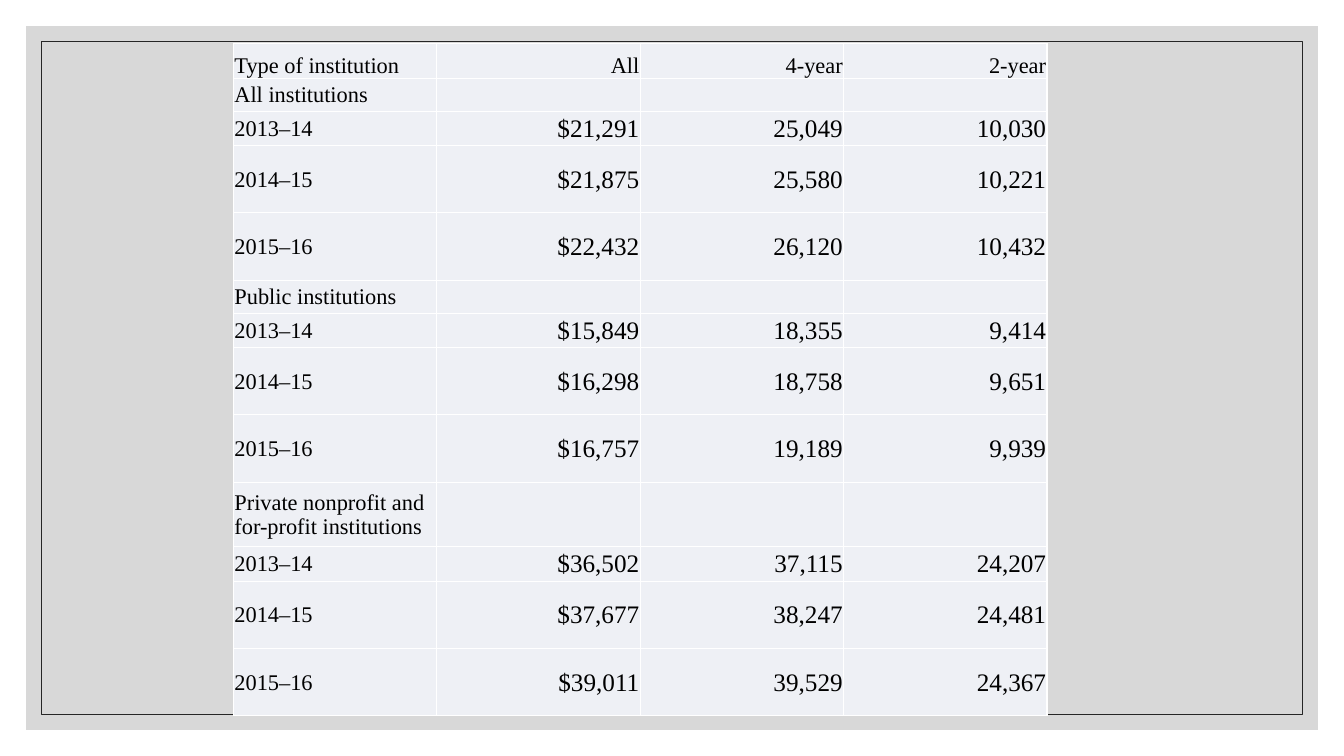
from dataclasses import dataclass

from lxml.etree import SubElement
from pptx import Presentation
from pptx.dml.color import RGBColor
from pptx.enum.shapes import MSO_SHAPE as Preset
from pptx.enum.text import MSO_ANCHOR as Anchor, PP_ALIGN as Align
from pptx.oxml.ns import qn
from pptx.util import Pt


@dataclass(frozen=True)
class Theme:
    font: str = "Times New Roman"
    label_size: int = 16
    value_size: int = 18
    text: str = "000000"
    panel: str = "BFBFBF"
    panel_opacity: int = 60
    frame: str = "262626"
    cell: str = "EEF0F5"
    border: str = "FFFFFF"


THEME = Theme()
SLIDE_WIDTH, SLIDE_HEIGHT = 960, 540
HEADER = ("Type of institution", "All", "4-year", "2-year")
YEARS = ("2013–14", "2014–15", "2015–16")
YEAR_HEIGHTS = (24.6, 48.1, 48.1)
HEADER_HEIGHT = 25
# Institution type, height of its heading row, costs for each year
GROUPS = (
    ("All institutions", 23.6, (
        ("$21,291", "25,049", "10,030"),
        ("$21,875", "25,580", "10,221"),
        ("$22,432", "26,120", "10,432"))),
    ("Public institutions", 23.6, (
        ("$15,849", "18,355", "9,414"),
        ("$16,298", "18,758", "9,651"),
        ("$16,757", "19,189", "9,939"))),
    ("Private nonprofit and for-profit institutions", 46.1, (
        ("$36,502", "37,115", "24,207"),
        ("$37,677", "38,247", "24,481"),
        ("$39,011", "39,529", "24,367"))),
)


def color(value):
    return RGBColor.from_string(value)


def add_rectangle(slide, left, top, width, height):
    shape = slide.shapes.add_shape(
        Preset.RECTANGLE, Pt(left), Pt(top), Pt(width), Pt(height))
    shape.shadow.inherit = False
    return shape


def add_backdrop(slide, left, top, width, height, inset=10.8):
    """Draw the translucent panel with a thin frame inside it."""
    panel = add_rectangle(slide, left, top, width, height)
    panel.fill.solid()
    panel.fill.fore_color.rgb = color(THEME.panel)
    panel.line.fill.background()
    panel_color = panel.fill._xPr.find(qn("a:solidFill"))[0]
    SubElement(panel_color, qn("a:alpha"), val=str(THEME.panel_opacity * 1000))

    frame = add_rectangle(slide, left + inset, top + inset,
                          width - 2 * inset, height - 2 * inset)
    frame.fill.background()
    frame.line.color.rgb = color(THEME.frame)
    frame.line.width = Pt(0.5)


def add_cell_borders(cell):
    properties = cell._tc.get_or_add_tcPr()
    for side in ("a:lnL", "a:lnR", "a:lnT", "a:lnB"):
        line = SubElement(properties, qn(side), w=str(Pt(1)))
        fill = SubElement(line, qn("a:solidFill"))
        SubElement(fill, qn("a:srgbClr"), val=THEME.border)


def format_cell(cell, text, size, align, anchor):
    add_cell_borders(cell)
    cell.fill.solid()
    cell.fill.fore_color.rgb = color(THEME.cell)
    cell.margin_left = cell.margin_right = cell.margin_top = Pt(0.7)
    cell.margin_bottom = 0
    cell.vertical_anchor = anchor
    cell.text = text
    paragraph = cell.text_frame.paragraphs[0]
    paragraph.alignment = align
    for run in paragraph.runs:
        run.font.name = THEME.font
        run.font.size = Pt(size)
        run.font.color.rgb = color(THEME.text)


def table_rows():
    """List each row as its texts and its height."""
    rows = [(HEADER, HEADER_HEIGHT)]
    for name, heading_height, costs in GROUPS:
        rows.append(((name, "", "", ""), heading_height))
        for year, values, height in zip(YEARS, costs, YEAR_HEIGHTS):
            rows.append(((year, *values), height))
    return rows


def add_cost_table(slide, left, top, width):
    rows = table_rows()
    total_height = sum(height for _, height in rows)
    table = slide.shapes.add_table(
        len(rows), len(HEADER), Pt(left), Pt(top), Pt(width), Pt(total_height)).table
    table.first_row = table.horz_banding = False
    for column in table.columns:
        column.width = Pt(width / len(HEADER))
    for row_index, (texts, height) in enumerate(rows):
        table.rows[row_index].height = Pt(height)
        is_header = row_index == 0
        for column_index, text in enumerate(texts):
            is_label = column_index == 0
            format_cell(
                table.cell(row_index, column_index), text,
                THEME.label_size if is_header or is_label else THEME.value_size,
                Align.LEFT if is_label else Align.RIGHT,
                Anchor.BOTTOM if is_header else Anchor.MIDDLE)


def main():
    presentation = Presentation()
    presentation.slide_width = Pt(SLIDE_WIDTH)
    presentation.slide_height = Pt(SLIDE_HEIGHT)
    slide = presentation.slides.add_slide(presentation.slide_layouts[6])
    margin = 18.7
    add_backdrop(slide, margin, margin,
                 SLIDE_WIDTH - 2 * margin, SLIDE_HEIGHT - 2 * margin)
    add_cost_table(slide, left=166.8, top=30.8, width=581.2)
    presentation.save("out.pptx")


if __name__ == "__main__":
    main()
